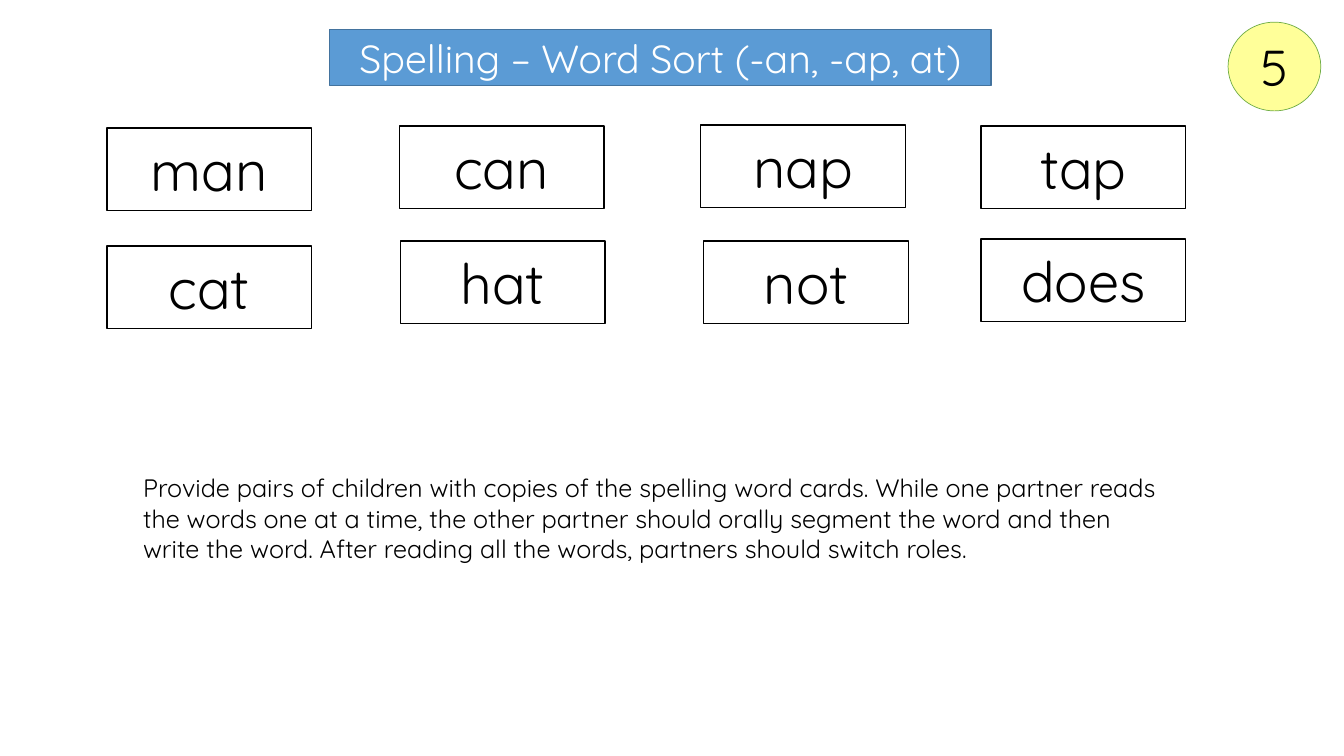
"""Build a spelling word sort slide with eight word cards and instructions."""
from dataclasses import dataclass

from pptx import Presentation
from pptx.dml.color import RGBColor
from pptx.enum.shapes import MSO_SHAPE
from pptx.enum.text import MSO_ANCHOR, MSO_AUTO_SIZE, PP_ALIGN
from pptx.shapes.autoshape import Shape
from pptx.slide import Slide
from pptx.util import Emu, Pt

PX = 9144
FONT = "Quicksand"
COLORS = {
    "black": "000000",
    "white": "FFFFFF",
    "blue": "5B9BD5",
    "navy": "43739E",
    "yellow": "FFFF99",
    "green": "70AD47",
}
CARD_WIDTH, CARD_HEIGHT = 203, 82
INSTRUCTIONS = (
    "Provide pairs of children with copies of the spelling word cards. "
    "While one partner reads the words one at a time, the other partner "
    "should orally segment the word and then write the word. "
    "After reading all the words, partners should switch roles."
)


@dataclass(frozen=True)
class Card:
    word: str
    left: int
    top: int


CARDS = [
    Card("man", 106, 127),
    Card("can", 396, 125),
    Card("nap", 695, 124),
    Card("tap", 973, 125),
    Card("cat", 106, 244),
    Card("hat", 397, 239),
    Card("not", 698, 239),
    Card("does", 973, 237),
]


def px(n: int) -> Emu:
    return Emu(n * PX)


def rgb(name: str) -> RGBColor:
    return RGBColor.from_string(COLORS[name])


def place(sp: Shape, left: int, top: int, width: int, height: int) -> None:
    sp.left, sp.top, sp.width, sp.height = map(px, (left, top, width, height))


def paint(sp: Shape, fill: str, line: str, weight: float) -> None:
    sp.fill.solid()
    sp.fill.fore_color.rgb = rgb(fill)
    sp.line.color.rgb = rgb(line)
    sp.line.width = Pt(weight)


def write(sp: Shape, text: str, size: int, color: str = "black",
          align: PP_ALIGN = PP_ALIGN.CENTER,
          anchor: MSO_ANCHOR = MSO_ANCHOR.MIDDLE) -> None:
    tf = sp.text_frame
    tf.text = text
    tf.word_wrap = True
    tf.auto_size = MSO_AUTO_SIZE.NONE
    tf.vertical_anchor = anchor
    p = tf.paragraphs[0]
    p.alignment = align
    r = p.runs[0]
    r.font.name = FONT
    r.font.size = Pt(size)
    r.font.color.rgb = rgb(color)


def add_title(s: Slide) -> None:
    sp = s.shapes.title
    place(sp, 327, 29, 656, 56)
    paint(sp, "blue", "navy", 1)
    write(sp, "Spelling – Word Sort (-an, -ap, at)", 28, "white")


def add_card(s: Slide, card: Card) -> None:
    sp = s.shapes.add_shape(MSO_SHAPE.RECTANGLE, px(card.left), px(card.top),
                            px(CARD_WIDTH), px(CARD_HEIGHT))
    sp.shadow.inherit = False
    paint(sp, "white", "black", 1)
    write(sp, card.word, 40)


def add_instructions(s: Slide) -> None:
    sp = s.shapes.add_textbox(px(132), px(464), px(1031), px(101))
    write(sp, INSTRUCTIONS, 18, align=PP_ALIGN.LEFT, anchor=MSO_ANCHOR.TOP)
    sp.text_frame.auto_size = MSO_AUTO_SIZE.SHAPE_TO_FIT_TEXT


def add_number(s: Slide) -> None:
    sp = s.shapes.add_shape(MSO_SHAPE.OVAL, px(1218), px(22), px(92), px(88))
    sp.shadow.inherit = False
    paint(sp, "yellow", "green", 0.5)
    write(sp, "5", 36)


def main() -> None:
    prs = Presentation()
    prs.slide_width, prs.slide_height = px(1333), px(750)
    s = prs.slides.add_slide(prs.slide_layouts.get_by_name("Title Only"))
    add_title(s)
    for card in CARDS:
        add_card(s, card)
    add_instructions(s)
    add_number(s)
    prs.save("out.pptx")


if __name__ == "__main__":
    main()
